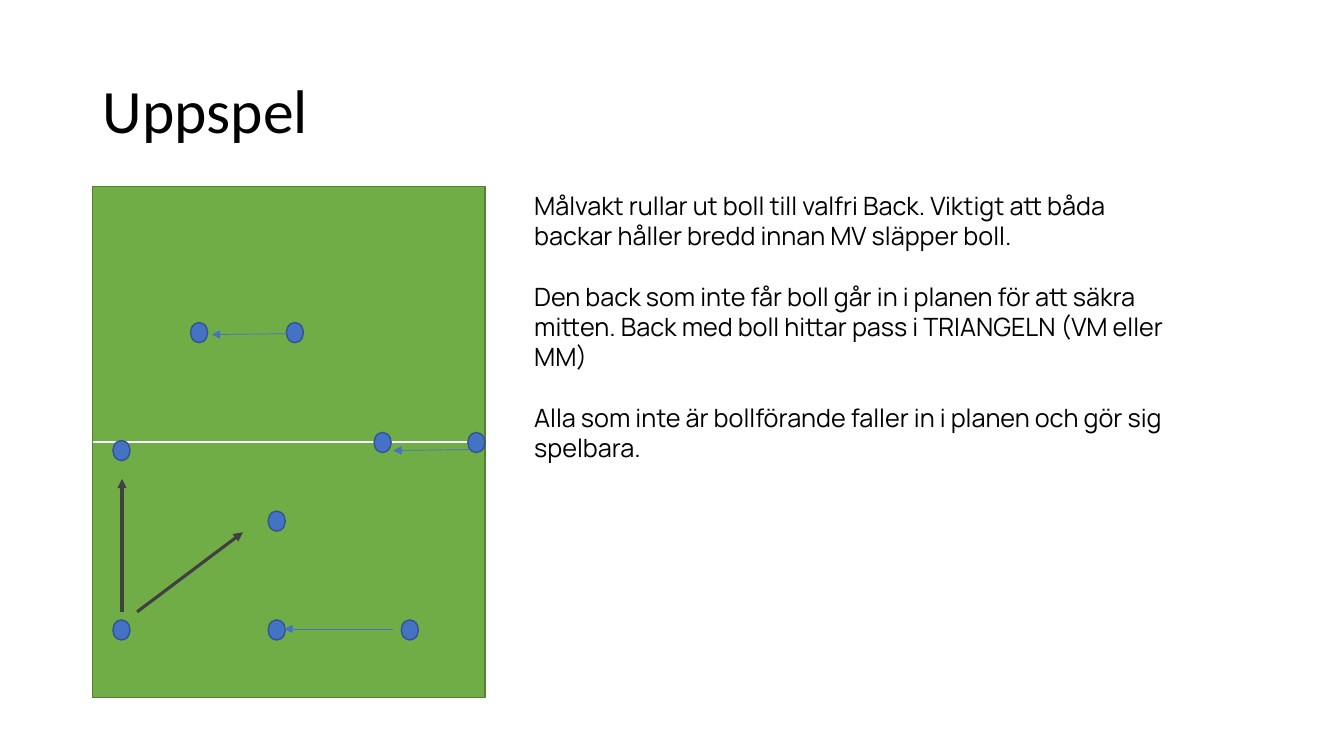
"""Build the Uppspel football drill slide."""
from typing import NamedTuple

from lxml import etree
from pptx import Presentation
from pptx.dml.color import RGBColor
from pptx.enum.shapes import MSO_CONNECTOR as CONN, MSO_SHAPE as SHAPE
from pptx.enum.text import MSO_ANCHOR as ANCHOR
from pptx.oxml.ns import qn
from pptx.util import Inches, Pt

BLACK = RGBColor(0x00, 0x00, 0x00)
WHITE = RGBColor(0xFF, 0xFF, 0xFF)
GRASS = RGBColor(0x70, 0xAD, 0x47)
GRASS_EDGE = RGBColor(0x53, 0x80, 0x35)
BLUE = RGBColor(0x44, 0x72, 0xC4)
BLUE_EDGE = RGBColor(0x32, 0x54, 0x91)
GREY = RGBColor(0x40, 0x40, 0x40)


class Box(NamedTuple):
    x: float
    y: float
    w: float
    h: float


class Player(NamedTuple):
    x: float
    y: float


class Move(NamedTuple):
    x1: float
    y1: float
    x2: float
    y2: float
    color: RGBColor = BLUE
    width: float = 0.5


class Style(NamedTuple):
    font: str
    size: float
    anchor: ANCHOR = ANCHOR.TOP
    line_spacing: float = 1.0
    gap: float = 0


PITCH = Box(0.92, 1.85, 3.89, 5.07)
PLAYER_W, PLAYER_H = 0.17, 0.2
PLAYERS = [
    Player(1.12, 6.15), Player(2.66, 6.15), Player(3.98, 6.15),
    Player(2.66, 5.07), Player(1.12, 4.37),
    Player(3.71, 4.29), Player(4.64, 4.29),
    Player(1.89, 3.2), Player(2.84, 3.2),
]
MOVES = [
    Move(1.21, 6.07, 1.21, 4.75, GREY, 2.25),
    Move(1.36, 6.07, 2.41, 5.28, GREY, 2.25),
    Move(3.9, 6.24, 2.82, 6.24),
    Move(4.66, 4.46, 3.9, 4.47),
    Move(2.86, 3.31, 2.1, 3.32),
]
INSTRUCTIONS = [
    "Målvakt rullar ut boll till valfri Back. Viktigt att båda backar håller "
    "bredd innan MV släpper boll.",
    "Den back som inte får boll går in i planen för att säkra mitten. Back med "
    "boll hittar pass i TRIANGELN (VM eller MM)",
    "Alla som inte är bollförande faller in i planen och gör sig spelbara.",
]


def add_text(s, box: Box, paragraphs: list[str], style: Style) -> None:
    tf = s.shapes.add_textbox(*map(Inches, box)).text_frame
    tf.word_wrap = True
    tf.vertical_anchor = style.anchor
    for i, text in enumerate(paragraphs):
        p = tf.add_paragraph() if i else tf.paragraphs[0]
        p.line_spacing = style.line_spacing
        p.space_before = Pt(style.gap if i else 0)
        r = p.add_run()
        r.text = text
        r.font.name = style.font
        r.font.size = Pt(style.size)
        r.font.color.rgb = BLACK


def add_filled(s, kind: SHAPE, box: Box, fill: RGBColor, edge: RGBColor):
    sp = s.shapes.add_shape(kind, *map(Inches, box))
    sp.shadow.inherit = False
    sp.fill.solid()
    sp.fill.fore_color.rgb = fill
    sp.line.color.rgb = edge
    sp.line.width = Pt(1)
    return sp


def add_line(s, move: Move, arrow: bool = True):
    ends = map(Inches, (move.x1, move.y1, move.x2, move.y2))
    line = s.shapes.add_connector(CONN.STRAIGHT, *ends)
    line.line.color.rgb = move.color
    line.line.width = Pt(move.width)
    if arrow:
        ln = line.line._get_or_add_ln()
        etree.SubElement(ln, qn("a:tailEnd"), type="triangle")
    etree.SubElement(line._element.spPr, qn("a:effectLst"))
    return line


def main() -> None:
    prs = Presentation()
    prs.slide_width, prs.slide_height = Inches(13.33), Inches(7.5)
    s = prs.slides.add_slide(prs.slide_layouts[6])

    add_text(s, Box(0.92, 0.4, 11.5, 1.45), ["Uppspel"],
             Style("Calibri", 44, ANCHOR.MIDDLE, 0.9))

    pitch = add_filled(s, SHAPE.RECTANGLE, PITCH, GRASS, GRASS_EDGE)
    mid_y = PITCH.y + PITCH.h / 2
    halfway = add_line(s, Move(PITCH.x, mid_y, PITCH.x + PITCH.w, mid_y, WHITE, 1.5),
                       arrow=False)
    halfway.begin_connect(pitch, 1)
    halfway.end_connect(pitch, 3)

    for player in PLAYERS:
        add_filled(s, SHAPE.OVAL, Box(*player, PLAYER_W, PLAYER_H), BLUE, BLUE_EDGE)
    for move in MOVES:
        add_line(s, move)

    add_text(s, Box(5.2, 1.84, 6.67, 4.04), INSTRUCTIONS,
             Style("Manrope", 18, gap=21.6))
    prs.save("out.pptx")


if __name__ == "__main__":
    main()
